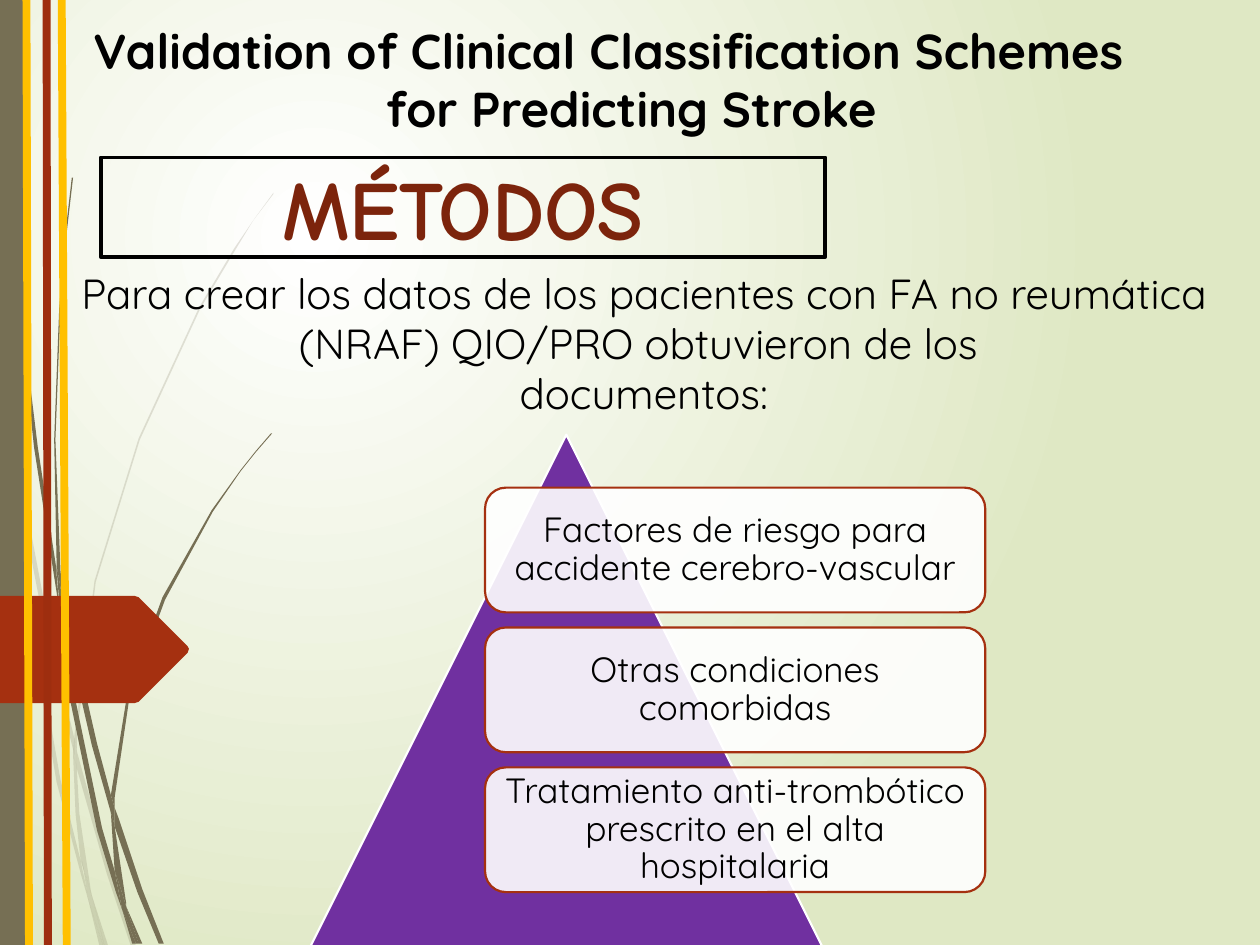
from lxml import etree
from pptx import Presentation
from pptx.dml.color import RGBColor
from pptx.enum.shapes import MSO_CONNECTOR, MSO_SHAPE
from pptx.enum.text import MSO_ANCHOR, MSO_AUTO_SIZE, PP_ALIGN
from pptx.oxml.ns import qn
from pptx.util import Pt

PX = 9144
LEFT, CENTER = PP_ALIGN.LEFT, PP_ALIGN.CENTER
TOP, MIDDLE = MSO_ANCHOR.TOP, MSO_ANCHOR.MIDDLE
GROW = MSO_AUTO_SIZE.SHAPE_TO_FIT_TEXT
RECT, ROUND = MSO_SHAPE.RECTANGLE, MSO_SHAPE.ROUNDED_RECTANGLE
CONE, LINE = MSO_SHAPE.ISOSCELES_TRIANGLE, MSO_CONNECTOR.STRAIGHT
SANS, COMIC = "Quicksand", "Comic Neue"
COLORS = {
    "white": "FFFFFF", "black": "000000", "pale": "DFE8C4", "olive": "766F54",
    "rust": "A53010", "brick": "9E2E0F", "brown": "7C240C",
    "gold": "FFC000", "purple": "7030A0",
}
FAINT = [
    [(8, 350), (6, 322), (0, 282), (0, 299), (7, 344)],
    [(40, 522), (59, 599), (59, 586), (43, 520), (10, 345), (12, 376)],
    [(64, 607), (61, 596), (61, 610), (85, 694), (104, 751), (108, 751), (88, 692)],
    [(83, 751), (86, 751), (73, 711)],
    [(64, 683), (48, 619), (22, 469), (12, 376), (8, 350), (19, 470), (45, 621),
     (64, 693), (70, 714), (69, 707)],
    [(58, 599), (60, 646), (64, 683), (67, 692), (73, 711), (72, 706), (63, 646),
     (61, 610), (61, 608)],
    [(61, 584), (76, 462), (111, 349), (159, 245), (187, 198), (201, 175),
     (217, 154), (217, 153), (201, 175), (186, 197), (158, 244), (110, 348),
     (75, 461), (59, 584), (59, 586), (61, 596)],
    [(70, 714), (79, 751), (82, 751)],
    [(61, 608), (61, 610), (61, 596), (59, 586), (58, 599)],
    [(67, 692), (65, 683), (69, 707), (70, 714), (82, 751), (83, 751), (73, 711)],
]
SOLID = [
    [(5, 110), (14, 233), (27, 355), (46, 477), (47, 481), (45, 457), (45, 453),
     (30, 355), (15, 232), (6, 109), (4, 48), (3, 0), (2, 0), (3, 48)],
    [(73, 592), (88, 645), (88, 633), (88, 631), (77, 590), (50, 472), (53, 505)],
    [(94, 649), (91, 641), (91, 656), (109, 708), (126, 749), (130, 749), (113, 706)],
    [(91, 691), (81, 657), (60, 556), (53, 505), (47, 477), (56, 557), (77, 659),
     (92, 708), (97, 722), (96, 717)],
    [(50, 472), (48, 453), (44, 349), (48, 245), (52, 193), (58, 141), (57, 141),
     (51, 193), (47, 245), (43, 349), (45, 449), (49, 472)],
    [(110, 749), (113, 749), (100, 719)],
    [(47, 477), (53, 505), (50, 472), (49, 472), (45, 449), (45, 453)],
    [(91, 633), (103, 552), (131, 476), (169, 406), (191, 374), (203, 359),
     (216, 344), (215, 344), (203, 358), (191, 373), (168, 405), (129, 474),
     (101, 551), (88, 631), (91, 641)],
    [(97, 722), (105, 749), (108, 749)],
    [(88, 645), (91, 691), (96, 706), (100, 719), (100, 716), (91, 656), (90, 651)],
    [(88, 645), (90, 651), (91, 656), (91, 641), (88, 631), (88, 633)],
    [(96, 706), (91, 691), (96, 717), (97, 722), (108, 749), (110, 749), (100, 719)],
]
ARROW = [(-3, 473), (107, 473), (110, 474), (149, 513), (150, 515), (149, 518),
         (110, 557), (107, 558), (-3, 558)]
LINES = [(21, 0, 23, 750, "gold"), (49, 0, 53, 753, "gold"), (37, 0, 38, 750, "brick")]
CARDS = [
    "Factores de riesgo para accidente cerebro-vascular",
    "Otras condiciones comorbidas",
    "Tratamiento anti-trombótico prescrito en el alta hospitalaria",
]


def tint(name):
    """Return the named colour."""
    return RGBColor.from_string(COLORS[name])


def paint(shape, fill, edge=None, width=0, alpha=100):
    """Set fill, outline and opacity, without a shadow."""
    shape.shadow.inherit = False
    if fill:
        shape.fill.solid()
        shape.fill.fore_color.rgb = tint(fill)
        if alpha < 100:
            color = shape.fill._xPr.find(qn("a:solidFill"))[0]
            etree.SubElement(color, qn("a:alpha"), val=str(alpha * 1000))
    else:
        shape.fill.background()
    if edge:
        shape.line.color.rgb = tint(edge)
        shape.line.width = Pt(width)
    else:
        shape.line.fill.background()


def write(shape, lines, size, font=SANS, color="black", bold=False,
          anchor=TOP, wrap=True):
    """Write centred lines into a shape."""
    frame = shape.text_frame
    frame.text = "\n".join(lines)
    frame.word_wrap = wrap
    frame.vertical_anchor = anchor
    for para in frame.paragraphs:
        para.alignment = CENTER
        for run in para.runs:
            run.font.size = Pt(size)
            run.font.name = font
            run.font.bold = bold
            run.font.color.rgb = tint(color)
    return frame


def place(shape, *box):
    """Move and size a shape in px."""
    shape.left, shape.top, shape.width, shape.height = (n * PX for n in box)


def block(slide, kind, box, fill, edge=None, width=0, alpha=100):
    """Add a painted preset shape."""
    shape = slide.shapes.add_shape(kind, *(n * PX for n in box))
    paint(shape, fill, edge, width, alpha)
    return shape


def trace(slide, points, fill, alpha=100):
    """Add a closed outline through the points."""
    pen = slide.shapes.build_freeform(*points[0], scale=PX)
    pen.add_line_segments(points[1:], close=True)
    paint(pen.convert_to_shape(), fill, alpha=alpha)


def stripe(slide, *ends, color):
    """Add a thick straight line."""
    line = slide.shapes.add_connector(LINE, *(n * PX for n in ends))
    line.line.color.rgb = tint(color)
    line.line.width = Pt(4.5)
    etree.SubElement(line._element.spPr, qn("a:effectLst"))


def wash(slide):
    """Give the slide a round white to pale gradient."""
    fill = slide.background.fill
    fill.gradient()
    for stop, name in zip(fill.gradient_stops, ("white", "pale")):
        stop.color.rgb = tint(name)
    grad = slide._element.find(".//" + qn("a:gradFill"))
    grad.remove(grad.find(qn("a:lin")))
    ring = etree.SubElement(grad, qn("a:path"), {"path": "circle"})
    etree.SubElement(ring, qn("a:fillToRect"), l="50000", t="50000",
                     r="100000", b="100000")


def head(slide):
    """Fill the title."""
    title = slide.shapes.title
    place(title, 64, 11, 863, 104)
    frame = write(title, ["Validation of Clinical Classification Schemes",
                          " for Predicting Stroke"], 28, bold=True, wrap=False)
    frame.auto_size = GROW
    frame.paragraphs[0].alignment = LEFT


def card(slide, row, text):
    """Add one rounded card of the pyramid list."""
    shape = block(slide, ROUND, (385, 387 + 111 * row, 397, 99), "white", "rust", 1.25, 90)
    frame = write(shape, [text], 20, anchor=MIDDLE)
    frame.margin_left = frame.margin_right = 8 * PX
    frame.margin_top = frame.margin_bottom = 8 * PX
    frame.paragraphs[0].line_spacing = 0.9


def main():
    """Build and save the slide."""
    deck = Presentation()
    deck.slide_width, deck.slide_height = 1000 * PX, 750 * PX
    slide = deck.slides.add_slide(deck.slide_layouts[5])
    wash(slide)
    for blade in FAINT:
        trace(slide, blade, "olive", 20)
    for blade in SOLID:
        trace(slide, blade, "olive")
    block(slide, RECT, (0, 0, 20, 750), "olive")
    trace(slide, ARROW, "rust")
    for *ends, color in LINES:
        stripe(slide, *ends, color=color)
    head(slide)
    label = block(slide, RECT, (80, 125, 575, 79), None, "black", 2.25)
    write(label, ["MÉTODOS"], 48, COMIC, "brown", True, MIDDLE)
    block(slide, CONE, (241, 345, 417, 417), "purple", "white", 1.25)
    for row, text in enumerate(CARDS):
        card(slide, row, text)
    note = slide.shapes.add_textbox(37 * PX, 207 * PX, 948 * PX, 131 * PX)
    write(note, ["Para crear los datos de los pacientes con FA no reumática "
                 "(NRAF) QIO/PRO obtuvieron de los ", "documentos:"], 24)
    deck.save("out.pptx")


if __name__ == "__main__":
    main()
